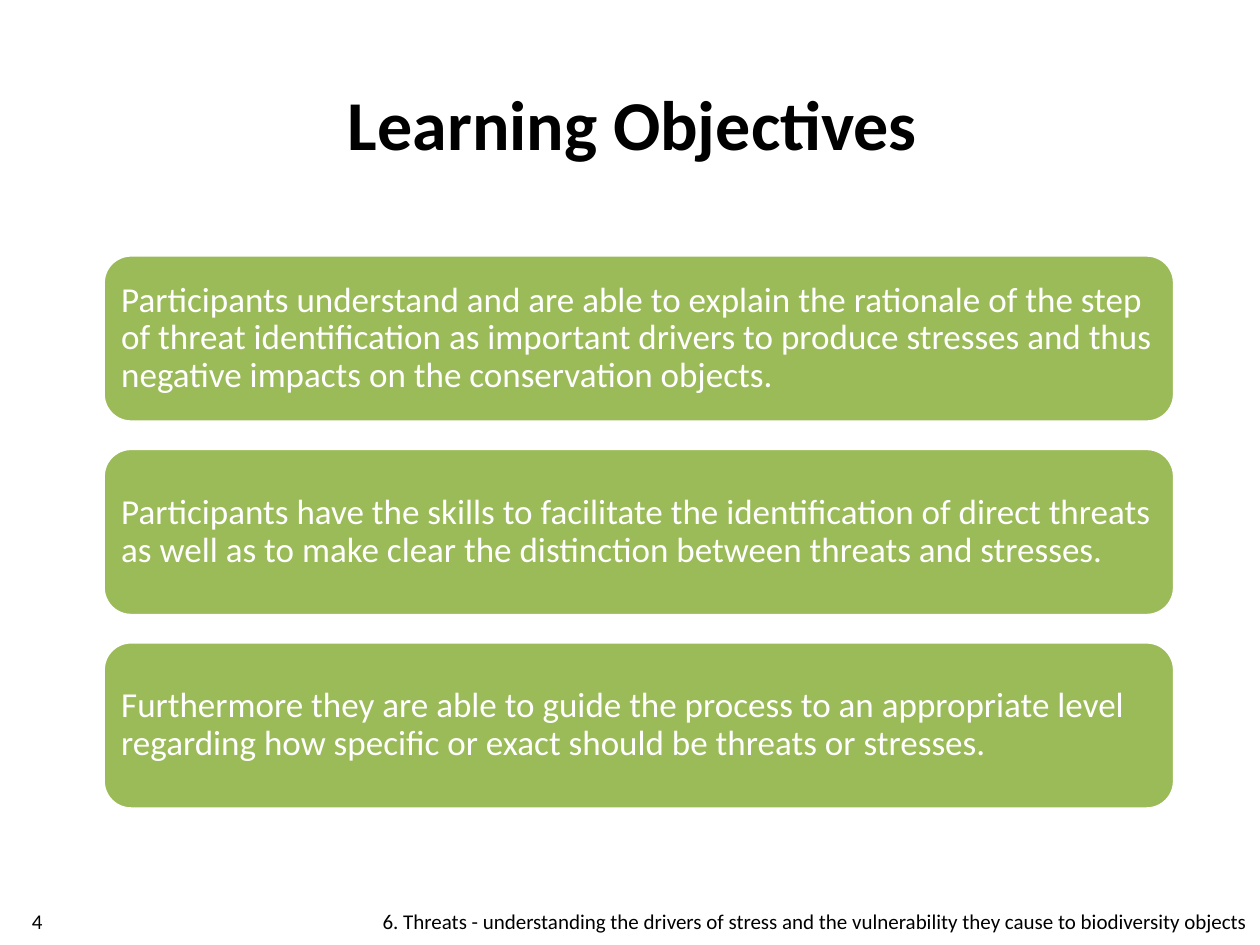
from pptx import Presentation
from pptx.dml.color import RGBColor
from pptx.enum.shapes import MSO_SHAPE
from pptx.enum.text import MSO_ANCHOR, PP_ALIGN
from pptx.util import Cm, Pt


def rgb(value):
    return RGBColor.from_string(value)


def write(shape, text, size, color, align, inset=(0.25, 0.13), bold=False):
    tf = shape.text_frame
    frame = {"word_wrap": True, "vertical_anchor": MSO_ANCHOR.MIDDLE,
             "margin_left": Cm(inset[0]), "margin_right": Cm(inset[0]),
             "margin_top": Cm(inset[1]), "margin_bottom": Cm(inset[1])}
    for name, value in frame.items():
        setattr(tf, name, value)
    p = tf.paragraphs[0]
    p.alignment = align
    r = p.add_run()
    r.text = text
    for name, value in {"name": "Calibri", "size": Pt(size), "bold": bold}.items():
        setattr(r.font, name, value)
    r.font.color.rgb = rgb(color)
    return p


prs = Presentation()
prs.slide_width, prs.slide_height = Cm(25.4), Cm(19.05)
s = prs.slides.add_slide(prs.slide_layouts[5])

# Title
title = s.shapes.title
place = {"left": 3.6, "top": 0.97, "width": 18.3, "height": 3}
for name, value in place.items():
    setattr(title, name, Cm(value))
write(title, "Learning Objectives", 40, "000000", PP_ALIGN.CENTER, bold=True)

# Objective cards
objectives = [
    "Participants understand and are able to explain the rationale of the step "
    "of threat identification as important drivers to produce stresses and thus "
    "negative impacts on the conservation objects.",
    "Participants have the skills to facilitate the identification of direct "
    "threats as well as to make clear the distinction between threats and stresses.",
    "Furthermore they are able to guide the process to an appropriate level "
    "regarding how specific or exact should be threats or stresses.",
]
top, height, pitch = 5.14, 3.37, 3.9
for i, text in enumerate(objectives):
    card = s.shapes.add_shape(MSO_SHAPE.ROUNDED_RECTANGLE, Cm(2.08),
                              Cm(top + i * pitch), Cm(21.6), Cm(height))
    card.shadow.inherit = False
    card.fill.solid()
    card.fill.fore_color.rgb = rgb("9BBB59")
    card.line.color.rgb = rgb("FFFFFF")
    card.line.width = Pt(2)
    p = write(card, text, 20, "FFFFFF", PP_ALIGN.LEFT, inset=(0.2, 0.2))
    p.line_spacing = 0.9
    p.space_after = Pt(7)

# Footer: slide number and module name
footer = [
    (0, 1.5, "4", PP_ALIGN.CENTER),
    (4.72, 20.68, "6. Threats - understanding the drivers of stress and the "
     "vulnerability they cause to biodiversity objects", PP_ALIGN.RIGHT),
]
for left, width, text, align in footer:
    box = s.shapes.add_textbox(Cm(left), Cm(18.08), Cm(width), Cm(0.97))
    write(box, text, 12, "000000", align)

prs.save("out.pptx")
